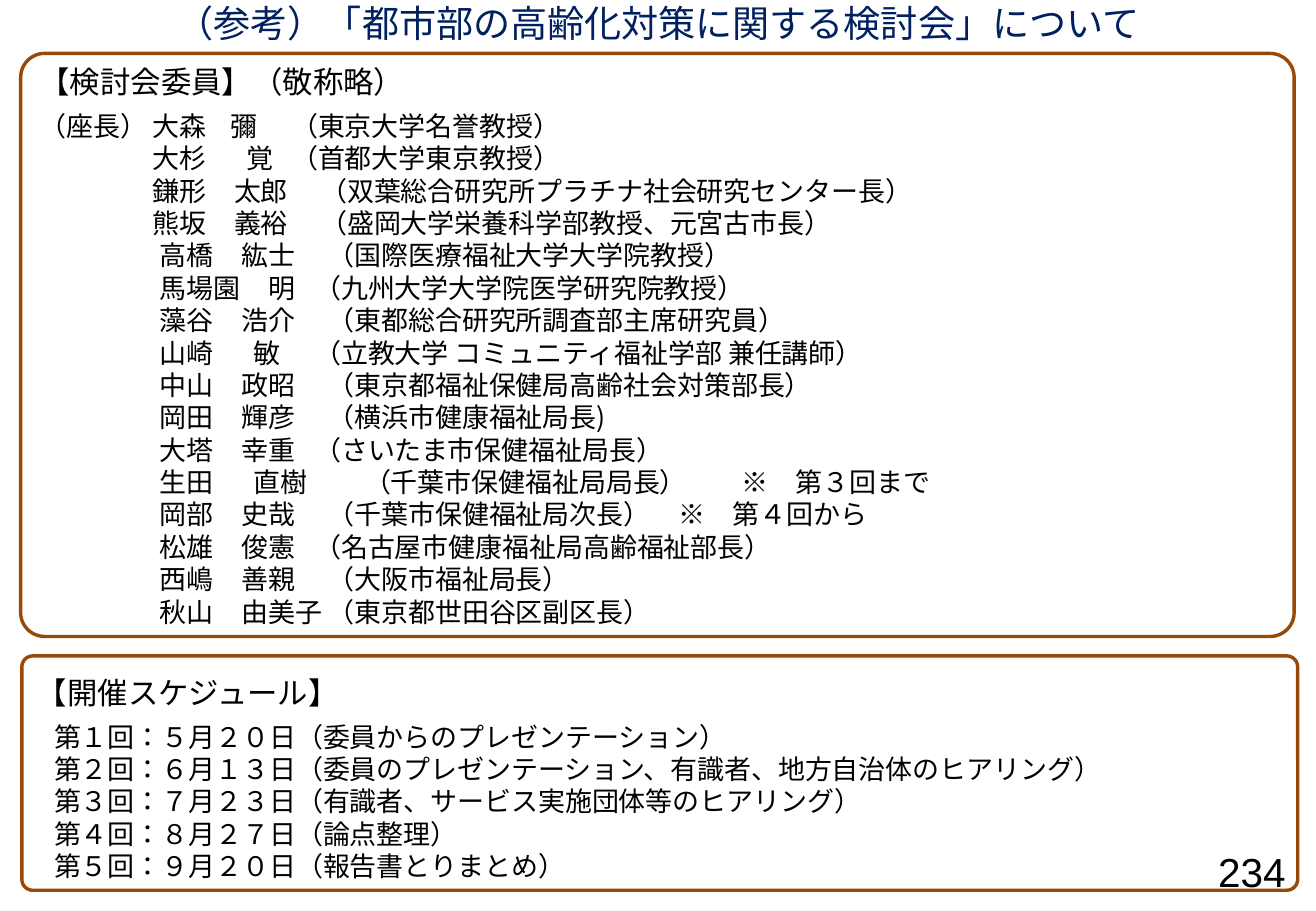
from lxml.etree import SubElement
from pptx import Presentation
from pptx.dml.color import RGBColor
from pptx.enum.lang import MSO_LANGUAGE_ID as LANG
from pptx.enum.shapes import MSO_SHAPE
from pptx.enum.text import MSO_ANCHOR, PP_ALIGN
from pptx.oxml.ns import qn
from pptx.util import Inches, Pt

NAVY = RGBColor(0x00, 0x20, 0x60)
BROWN = RGBColor(0x98, 0x48, 0x07)
WHITE = RGBColor(0xFF, 0xFF, 0xFF)
BLACK = RGBColor(0x00, 0x00, 0x00)
GOTHIC = "Noto Sans CJK JP"

# Tab stops in inches: surname, given name, role and, where present, note
CHAIR = (0.93, 1.57, 2.07)
FIRST = (0.93, 1.7, 2.07)
LEFT = (0.93, 1.6, 2.31)
WIDE = (0.99, 1.66, 2.37)
NARROW = (0.99, 1.66, 2.26)
MEMBERS = [
    (CHAIR, "（座長）", "大森", "彌", "（東京大学名誉教授）"),
    (FIRST, "", "大杉", "覚", "（首都大学東京教授）"),
    (LEFT, "", "鎌形", "太郎", "（双葉総合研究所プラチナ社会研究センター長）"),
    (LEFT, "", "熊坂", "義裕", "（盛岡大学栄養科学部教授、元宮古市長）"),
    (WIDE, "", "高橋", "紘士", "（国際医療福祉大学大学院教授）"),
    ((0.99, 1.88, 2.26), "", "馬場園", "明", "（九州大学大学院医学研究院教授）"),
    (WIDE, "", "藻谷", "浩介", "（東都総合研究所調査部主席研究員）"),
    ((0.99, 1.76, 2.26), "", "山崎", "敏", "（立教大学 コミュニティ福祉学部 兼任講師）"),
    (WIDE, "", "中山", "政昭", "（東京都福祉保健局高齢社会対策部長）"),
    (WIDE, "", "岡田", "輝彦", "（横浜市健康福祉局長)"),
    (NARROW, "", "大塔", "幸重", "（さいたま市保健福祉局長）"),
    ((0.99, 1.76, 2.67, 5.78), "", "生田", "直樹", "（千葉市保健福祉局局長）", "※　第３回まで"),
    (WIDE + (5.26,), "", "岡部", "史哉", "（千葉市保健福祉局次長）", "※　第４回から"),
    (NARROW, "", "松雄", "俊憲", "（名古屋市健康福祉局高齢福祉部長）"),
    (WIDE, "", "西嶋", "善親", "（大阪市福祉局長）"),
    (WIDE, "", "秋山", "由美子", "（東京都世田谷区副区長）"),
]
MEETINGS = [
    "第１回：５月２０日（委員からのプレゼンテーション）",
    "第２回：６月１３日（委員のプレゼンテーション、有識者、地方自治体のヒアリング）",
    "第３回：７月２３日（有識者、サービス実施団体等のヒアリング）",
    "第４回：８月２７日（論点整理）",
    "第５回：９月２０日（報告書とりまとめ）",
]


def write(p, text, size, color=BLACK, font=GOTHIC, align=PP_ALIGN.LEFT):
    """Fill a paragraph, with lines 1.2 times the text size apart."""
    p.text = text
    p.alignment = align
    p.line_spacing = Pt(size * 1.2)
    p.font.size, p.font.name, p.font.color.rgb = Pt(size), font, color
    SubElement(p.font._element, qn("a:ea")).set("typeface", GOTHIC)
    p.runs[0].font.language_id = LANG.JAPANESE
    return p


def panel(left, top, width, height, corner, inset, heading):
    """Add a rounded brown frame with its heading and return its shape."""
    sp = s.shapes.add_shape(MSO_SHAPE.ROUNDED_RECTANGLE, Inches(left), Inches(top),
                            Inches(width), Inches(height))
    sp.adjustments[0] = corner
    sp.shadow.inherit = False
    sp.fill.background()
    sp.line.color.rgb, sp.line.width = BROWN, Pt(2)
    tf = sp.text_frame
    tf.vertical_anchor = MSO_ANCHOR.TOP
    tf.margin_top, tf.margin_bottom = Inches(inset), 0
    write(tf.paragraphs[0], heading, 18).space_after = Pt(6)
    return sp


prs = Presentation()
prs.slide_width, prs.slide_height = Inches(10.83), Inches(7.5)
s = prs.slides.add_slide(prs.slide_layouts[6])

tf = s.shapes.add_textbox(Inches(0.38), 0, Inches(10.07), Inches(0.37)).text_frame
tf.word_wrap = True
tf.margin_top = tf.margin_bottom = 0
write(tf.paragraphs[0], "（参考）「都市部の高齢化対策に関する検討会」について", 22, NAVY,
      align=PP_ALIGN.CENTER)

members = panel(0.17, 0.44, 10.48, 4.8, 0.041, 0.02, "【検討会委員】（敬称略）")
for stops, *cells in MEMBERS:
    p = write(members.text_frame.add_paragraph(), "\t".join(cells), 16)
    tabs = p._p.get_or_add_pPr().makeelement(qn("a:tabLst"))
    for stop in stops:
        SubElement(tabs, qn("a:tab"), pos=str(Inches(stop)), algn="l")
    p.font._element.addprevious(tabs)

schedule = panel(0.18, 5.4, 10.5, 1.93, 0.047, 0.12, "【開催スケジュール】")
schedule.fill.solid()
schedule.fill.fore_color.rgb = WHITE
for meeting in MEETINGS:
    p = write(schedule.text_frame.add_paragraph(), meeting, 16, font="Arial")
    p._p.get_or_add_pPr().set("marL", str(Inches(0.14)))

tf = s.shapes.add_textbox(Inches(9.91), Inches(6.97), Inches(0.77), Inches(0.4)).text_frame
tf.word_wrap = True
tf.vertical_anchor = MSO_ANCHOR.MIDDLE
write(tf.paragraphs[0], "234", 24, font="Arial", align=PP_ALIGN.RIGHT)

prs.save("out.pptx")
